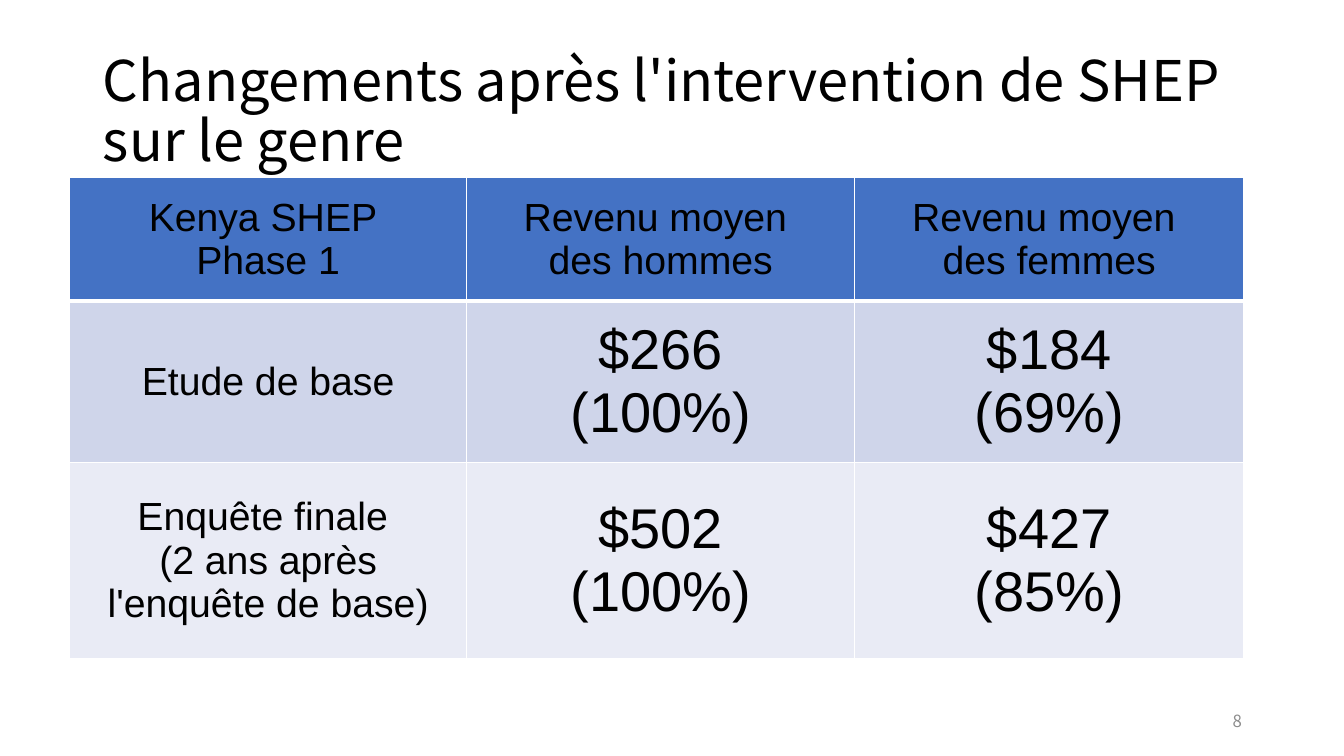
from dataclasses import dataclass

from lxml import etree
from pptx import Presentation
from pptx.dml.color import RGBColor
from pptx.enum.text import MSO_ANCHOR, MSO_AUTO_SIZE, PP_ALIGN
from pptx.oxml.ns import qn
from pptx.slide import Slide
from pptx.table import _Cell
from pptx.text.text import TextFrame
from pptx.util import Cm, Pt

LEFT = PP_ALIGN.LEFT
CENTER = PP_ALIGN.CENTER
RIGHT = PP_ALIGN.RIGHT
MIDDLE = MSO_ANCHOR.MIDDLE
NO_AUTOFIT = MSO_AUTO_SIZE.NONE

BLACK = RGBColor(0x00, 0x00, 0x00)
GREY = RGBColor(0x8C, 0x8C, 0x8C)
WHITE = RGBColor(0xFF, 0xFF, 0xFF)
BLUE = RGBColor(0x44, 0x72, 0xC4)
PALE_BLUE = RGBColor(0xCF, 0xD5, 0xEA)
PALEST_BLUE = RGBColor(0xE9, 0xEB, 0xF5)

COLUMN_WIDTHS = (10.01, 9.78, 9.80)


@dataclass(frozen=True)
class TextStyle:
    font: str
    size: int
    color: RGBColor
    align: PP_ALIGN


@dataclass(frozen=True)
class IncomeRow:
    texts: tuple[str, str, str]
    height: float
    fill: RGBColor
    value_size: int = 40
    bottom_border: int = 1


TITLE_STYLE = TextStyle("Noto Sans CJK JP", 40, BLACK, LEFT)
NUMBER_STYLE = TextStyle("Noto Sans CJK JP", 12, GREY, RIGHT)

INCOME_ROWS = (
    IncomeRow(
        ("Kenya SHEP \vPhase 1", "Revenu moyen \vdes hommes", "Revenu moyen \vdes femmes"),
        3.12, BLUE, value_size=28, bottom_border=3,
    ),
    IncomeRow(("Etude de base", "$266\n(100%)", "$184\n(69%)"), 4.06, PALE_BLUE),
    IncomeRow(
        ("Enquête finale \n(2 ans après l'enquête de base)", "$502\n(100%)", "$427\n(85%)"),
        4.95, PALEST_BLUE,
    ),
)


def write_text(frame: TextFrame, text: str, style: TextStyle) -> None:
    frame.text = text
    for para in frame.paragraphs:
        para.alignment = style.align
        for span in para.runs:
            span.font.name = style.font
            span.font.size = Pt(style.size)
            span.font.color.rgb = style.color


def add_borders(cell: _Cell, bottom_width: int) -> None:
    properties = cell._tc.get_or_add_tcPr()
    for side, width in (("L", 1), ("R", 1), ("T", 1), ("B", bottom_width)):
        line = etree.SubElement(properties, qn(f"a:ln{side}"), w=str(Pt(width)))
        fill = etree.SubElement(line, qn("a:solidFill"))
        etree.SubElement(fill, qn("a:srgbClr"), val=str(WHITE))


def add_title(slide: Slide) -> None:
    title = slide.shapes.title
    title.left, title.top = Cm(2.34), Cm(1.02)
    title.width, title.height = Cm(29.21), Cm(3.68)
    frame = title.text_frame
    frame.auto_size = NO_AUTOFIT
    frame.vertical_anchor = MIDDLE
    write_text(frame, "Changements après l'intervention de SHEP sur le genre", TITLE_STYLE)
    frame.paragraphs[0].line_spacing = 0.9


def add_page_number(slide: Slide) -> None:
    box = slide.shapes.add_textbox(Cm(23.93), Cm(17.65), Cm(7.62), Cm(1.02))
    frame = box.text_frame
    frame.word_wrap = True
    frame.vertical_anchor = MIDDLE
    write_text(frame, "8", NUMBER_STYLE)


def add_income_table(slide: Slide) -> None:
    table = slide.shapes.add_table(
        len(INCOME_ROWS), len(COLUMN_WIDTHS), Cm(1.75), Cm(4.47),
        Cm(sum(COLUMN_WIDTHS)), Cm(sum(row.height for row in INCOME_ROWS)),
    ).table
    for column, width in zip(table.columns, COLUMN_WIDTHS):
        column.width = Cm(width)
    for table_row, row in zip(table.rows, INCOME_ROWS):
        table_row.height = Cm(row.height)
        sizes = (28, row.value_size, row.value_size)
        for cell, text, size in zip(table_row.cells, row.texts, sizes):
            add_borders(cell, row.bottom_border)
            cell.fill.solid()
            cell.fill.fore_color.rgb = row.fill
            cell.vertical_anchor = MIDDLE
            write_text(cell.text_frame, text, TextStyle("Arial", size, BLACK, CENTER))
            for para in cell.text_frame.paragraphs:
                para.font.bold = False
                for span in para.runs:
                    span.font.bold = False


def main() -> None:
    deck = Presentation()
    deck.slide_width, deck.slide_height = Cm(33.87), Cm(19.05)
    slide = deck.slides.add_slide(deck.slide_layouts[5])
    add_title(slide)
    add_page_number(slide)
    add_income_table(slide)
    deck.save("out.pptx")


if __name__ == "__main__":
    main()
